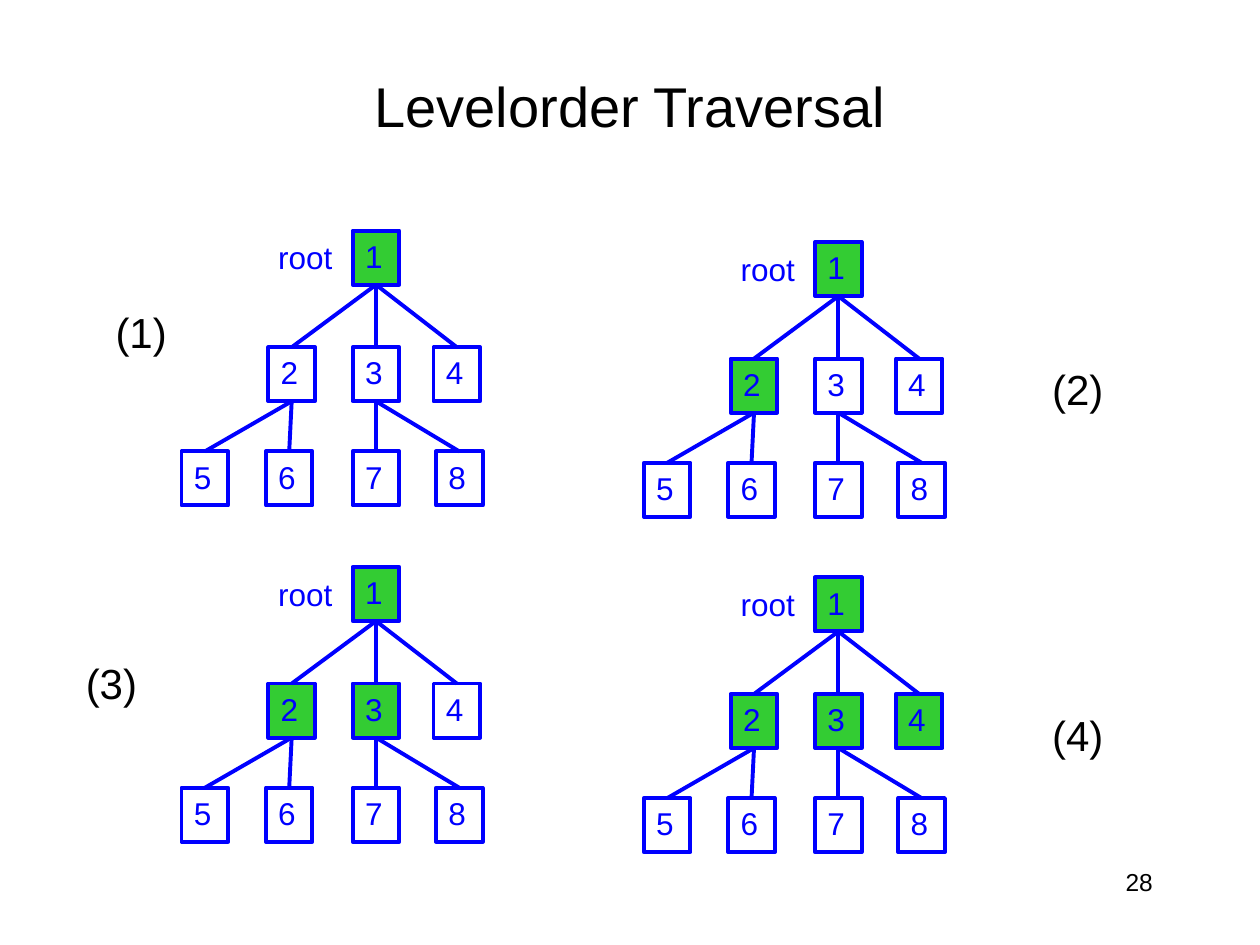
from lxml.etree import SubElement
from pptx import Presentation
from pptx.dml.color import RGBColor
from pptx.enum.shapes import MSO_CONNECTOR, MSO_SHAPE
from pptx.enum.text import MSO_ANCHOR, MSO_AUTO_SIZE, PP_ALIGN
from pptx.oxml.ns import qn
from pptx.util import Cm, Pt

BLACK = RGBColor(0x00, 0x00, 0x00)
BLUE = RGBColor(0x00, 0x00, 0xFF)
GREEN = RGBColor(0x33, 0xCC, 0x33)

NODE_WIDTH, NODE_HEIGHT = 0.94, 1.09
NODES = {
    1: (3.45, 0), 2: (1.75, 2.35), 3: (3.45, 2.35), 4: (5.08, 2.35),
    5: (0, 4.45), 6: (1.7, 4.45), 7: (3.45, 4.45), 8: (5.13, 4.45),
}
EDGES = [(1, 3), (1, 2), (1, 4), (2, 5), (2, 6), (3, 7), (3, 8)]
TREES = [
    (3.66, 4.65, 2.08, 6.05),
    (12.98, 4.88, 20.96, 7.2),
    (3.66, 11.43, 1.48, 13.12),
    (12.98, 11.64, 20.96, 14.18),
]


def set_text(shape, text, size, color, alignment=PP_ALIGN.LEFT, anchor=MSO_ANCHOR.TOP):
    frame = shape.text_frame
    frame.text = text
    frame.vertical_anchor = anchor
    paragraph = frame.paragraphs[0]
    paragraph.alignment = alignment
    font = paragraph.runs[0].font
    font.name = "Arial"
    font.size = Pt(size)
    font.color.rgb = color


def add_label(left, top, width, height, text, size, color):
    label = slide.shapes.add_textbox(Cm(left), Cm(top), Cm(width), Cm(height))
    set_text(label, text, size, color)
    label.text_frame.word_wrap = False
    label.text_frame.auto_size = MSO_AUTO_SIZE.SHAPE_TO_FIT_TEXT


presentation = Presentation()
presentation.slide_width = Cm(25.4)
presentation.slide_height = Cm(19.05)
slide = presentation.slides.add_slide(presentation.slide_layouts[6])

page_number = slide.shapes.add_textbox(Cm(18.21), Cm(17.35), Cm(5.28), Cm(1.27))
page_number.text_frame.word_wrap = True
set_text(page_number, "28", 14, BLACK, PP_ALIGN.RIGHT)

title = slide.shapes.add_textbox(Cm(1.9), Cm(1.07), Cm(21.6), Cm(2.11))
title.text_frame.word_wrap = True
set_text(title, "Levelorder Traversal", 32, BLACK, PP_ALIGN.CENTER, MSO_ANCHOR.MIDDLE)

for step, (tree_left, tree_top, label_left, label_top) in enumerate(TREES, start=1):
    boxes = {}
    for number, (left, top) in NODES.items():
        box = slide.shapes.add_shape(
            MSO_SHAPE.RECTANGLE, Cm(tree_left + left), Cm(tree_top + top),
            Cm(NODE_WIDTH), Cm(NODE_HEIGHT))
        box.shadow.inherit = False
        if number <= step:
            box.fill.solid()
            box.fill.fore_color.rgb = GREEN
        else:
            box.fill.background()
        box.line.color.rgb = BLUE
        box.line.width = Pt(2.25)
        set_text(box, str(number), 18, BLUE)
        box.text_frame.word_wrap = False
        box.text_frame.auto_size = MSO_AUTO_SIZE.SHAPE_TO_FIT_TEXT
        boxes[number] = box

    for parent, child in EDGES:
        edge = slide.shapes.add_connector(MSO_CONNECTOR.STRAIGHT, 0, 0, 0, 0)
        edge.begin_connect(boxes[parent], 2)
        edge.end_connect(boxes[child], 0)
        edge.line.color.rgb = BLUE
        edge.line.width = Pt(2.25)
        SubElement(edge.element.spPr, qn("a:effectLst"))

    add_label(tree_left + 1.7, tree_top + 0.03, 1.6, 1.02, "root", 18, BLUE)
    add_label(label_left, label_top, 1.55, 1.27, f"({step})", 24, BLACK)

presentation.save("out.pptx")
